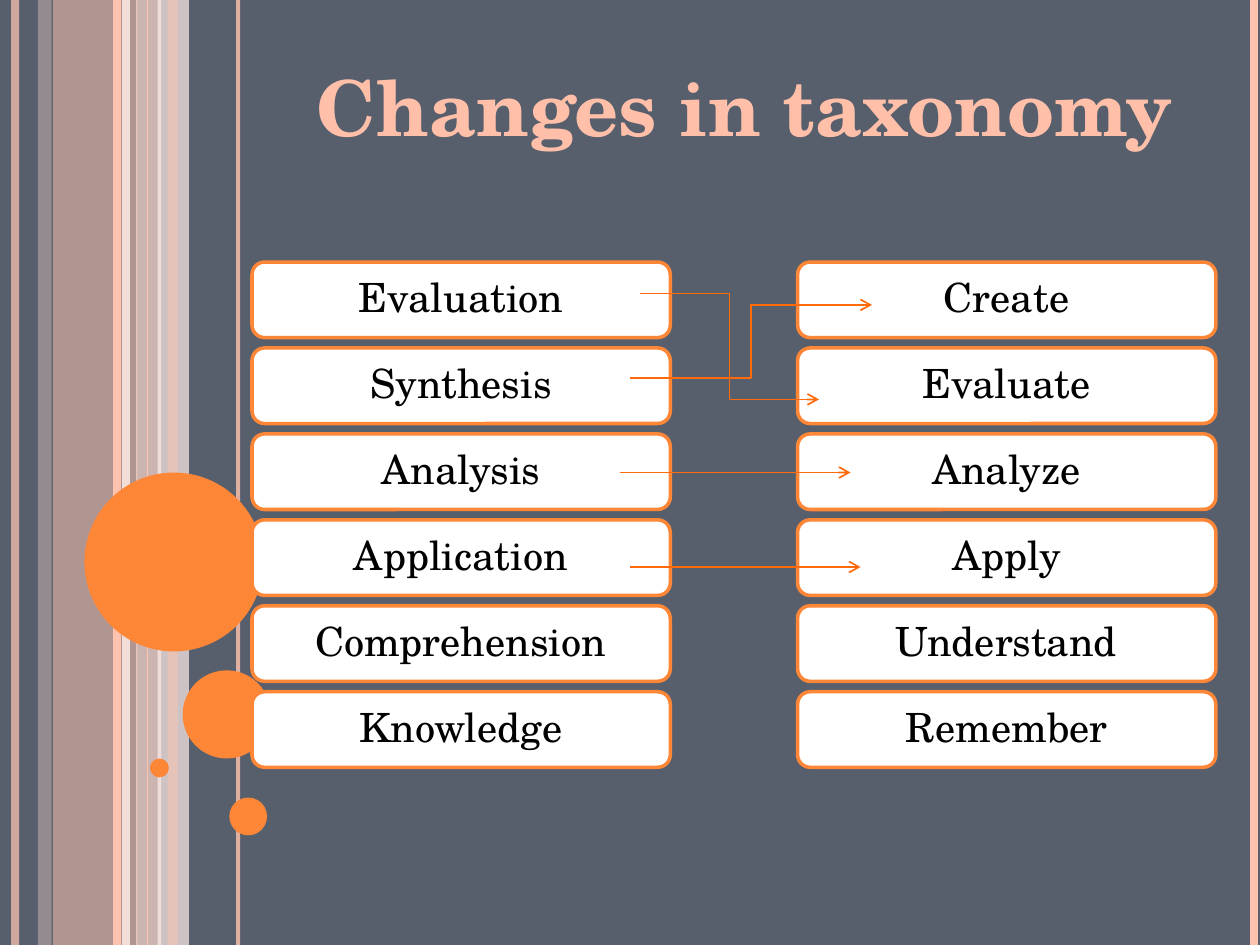
from lxml.etree import SubElement
from pptx import Presentation
from pptx.dml.color import RGBColor
from pptx.enum.shapes import MSO_CONNECTOR, MSO_SHAPE
from pptx.enum.text import MSO_ANCHOR, PP_ALIGN
from pptx.oxml.ns import qn
from pptx.util import Inches, Pt

SLATE = RGBColor(0x57, 0x5F, 0x6D)
PEACH = RGBColor(0xFE, 0xC3, 0xAE)
PALE_PEACH = RGBColor(0xFF, 0xD9, 0xCE)
BLUSH = RGBColor(0xFF, 0xED, 0xE8)
TITLE_PEACH = RGBColor(0xFF, 0xBF, 0xA8)
ORANGE = RGBColor(0xFE, 0x86, 0x37)
ARROW_ORANGE = RGBColor(0xFF, 0x6B, 0x0A)
WHITE = RGBColor(0xFF, 0xFF, 0xFF)
BLACK = RGBColor(0, 0, 0)
FONT = "TeX Gyre Schola"
HEIGHT = 7.5


class SlideBuilder:
    """Holds the style and the current slide."""

    def __init__(self, page):
        self.page = page
        page.background.fill.solid()
        page.background.fill.fore_color.rgb = SLATE

    def set_opacity(self, element, percent):
        if percent < 100:
            color = next(element.iter(qn("a:srgbClr")))
            SubElement(color, qn("a:alpha"), val=str(percent * 1000))

    def format_text(self, frame, text, size, color, bold=False):
        frame.text = text
        frame.word_wrap = True
        frame.vertical_anchor = MSO_ANCHOR.MIDDLE
        para = frame.paragraphs[0]
        para.alignment = PP_ALIGN.CENTER
        span = para.runs[0]
        span.font.name = FONT
        span.font.size = Pt(size)
        span.font.bold = bold
        span.font.color.rgb = color
        return para

    def title(self, text, left, top, width, height):
        box = self.page.shapes.title
        box.left, box.top = Inches(left), Inches(top)
        box.width, box.height = Inches(width), Inches(height)
        self.format_text(box.text_frame, text, 44, TITLE_PEACH, bold=True)

    def shape(self, kind, left, top, width, height, color, opacity=100):
        shape = self.page.shapes.add_shape(
            kind, Inches(left), Inches(top), Inches(width), Inches(height))
        shape.shadow.inherit = False
        shape.fill.solid()
        shape.fill.fore_color.rgb = color
        self.set_opacity(shape.fill._xPr, opacity)
        shape.line.fill.background()
        return shape

    def level_box(self, text, left, top, width, height):
        box = self.shape(MSO_SHAPE.ROUNDED_RECTANGLE, left, top, width, height, WHITE)
        box.line.color.rgb = ORANGE
        box.line.width = Pt(2)
        para = self.format_text(box.text_frame, text, 23, BLACK)
        para.line_spacing = 0.9

    def line(self, start, end, color, width, opacity=100, kind=MSO_CONNECTOR.STRAIGHT):
        line = self.page.shapes.add_connector(
            kind, *(Inches(value) for value in (*start, *end)))
        line.line.color.rgb = color
        line.line.width = Pt(width)
        self.set_opacity(line.line._ln, opacity)
        SubElement(line._element.spPr, qn("a:effectLst"))
        return line

    def arrow(self, start, end):
        bent = start[1] != end[1]
        kind = MSO_CONNECTOR.ELBOW if bent else MSO_CONNECTOR.STRAIGHT
        line = self.line(start, end, ARROW_ORANGE, 1, kind=kind)
        SubElement(line.line._ln, qn("a:tailEnd"), type="arrow")


def main():
    deck = Presentation()
    deck.slide_width, deck.slide_height = Inches(10), Inches(HEIGHT)
    builder = SlideBuilder(deck.slides.add_slide(deck.slide_layouts[5]))

    # Vertical bands and lines: left, width, color, opacity
    bands = [(0.42, 0.67, PEACH, 54), (0.3, 0.11, PALE_PEACH, 36),
             (1.08, 0.2, PALE_PEACH, 70), (1.25, 0.25, BLUSH, 71)]
    for left, width, color, opacity in bands:
        builder.shape(MSO_SHAPE.RECTANGLE, left, 0, width, HEIGHT, color, opacity)
    stripes = [(0.12, 4.5, PEACH, 73), (1, 4.5, BLUSH, 83), (0.93, 4.5, PEACH, 100),
               (1.89, 2.25, PEACH, 82), (1.17, 0.75, PEACH, 100),
               (9.95, 4.5, PEACH, 100)]
    for x, width, color, opacity in stripes:
        builder.line((x, 0), (x, HEIGHT), color, width, opacity)
    builder.shape(MSO_SHAPE.RECTANGLE, 1.33, 0, 0.08, HEIGHT, PEACH, 51)

    # Circles: left, top, diameter
    for left, top, size in [(0.67, 3.75, 1.42), (1.45, 5.32, 0.7),
                            (1.19, 6.02, 0.15), (1.82, 6.33, 0.3)]:
        builder.shape(MSO_SHAPE.OVAL, left, top, size, size, ORANGE)

    builder.title("Changes in taxonomy", 1.83, 0.42, 8.17, 0.84)

    # Old levels on the left, new levels on the right
    columns = {
        2: ["Evaluation", "Synthesis", "Analysis", "Application",
            "Comprehension", "Knowledge"],
        6.33: ["Create", "Evaluate", "Analyze", "Apply", "Understand", "Remember"],
    }
    first_top, row_step = 2.08, 0.682
    for left, levels in columns.items():
        for row, level in enumerate(levels):
            builder.level_box(level, left, first_top + row * row_step, 3.32, 0.6)

    # Arrows from old to new levels
    for start, end in [((5.08, 2.33), (6.5, 3.17)), ((5, 4.5), (6.83, 4.5)),
                       ((4.92, 3.75), (6.75, 3.75)), ((5, 3), (6.92, 2.42))]:
        builder.arrow(start, end)

    deck.save("out.pptx")


if __name__ == "__main__":
    main()
